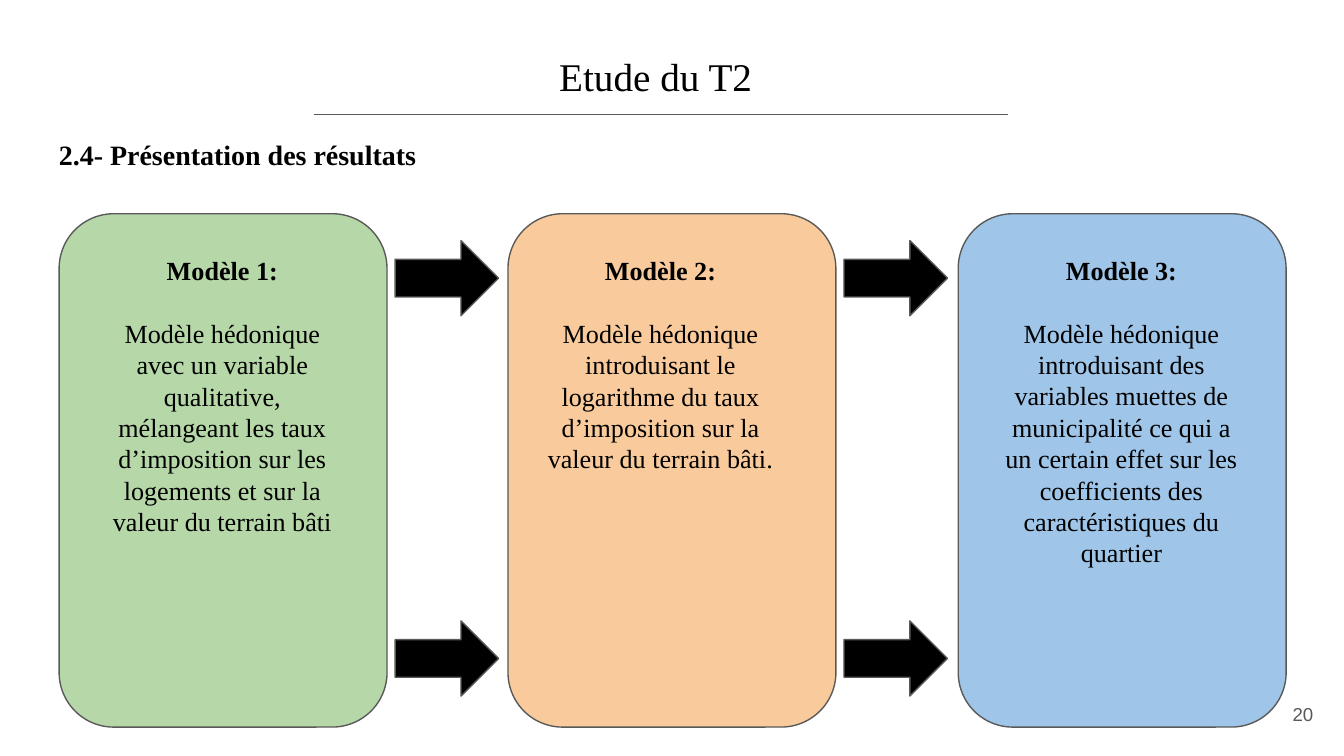
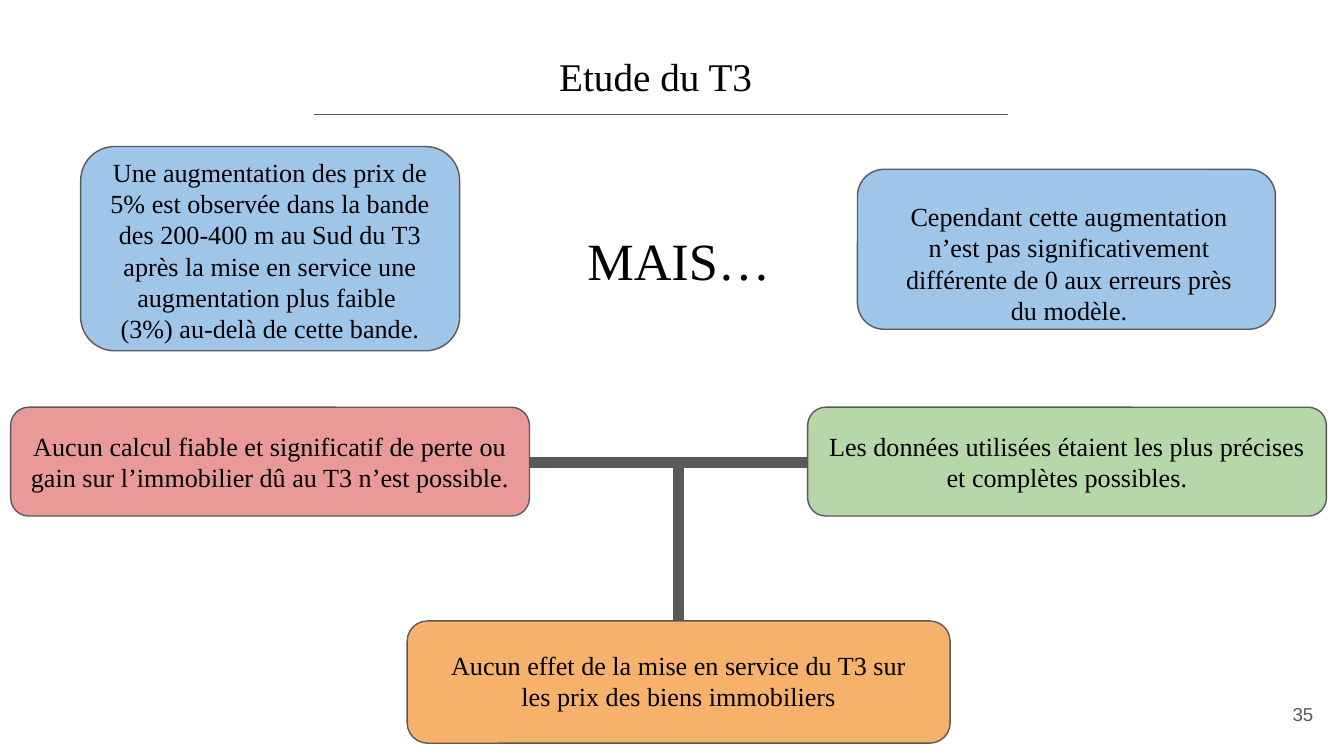
from lxml import etree
from pptx import Presentation
from pptx.dml.color import RGBColor
from pptx.enum.shapes import MSO_CONNECTOR, MSO_SHAPE
from pptx.enum.text import MSO_ANCHOR, MSO_AUTO_SIZE, PP_ALIGN
from pptx.oxml.ns import qn
from pptx.util import Pt

PX = 9144
W = 1000
LEFT, CENTER, RIGHT = PP_ALIGN.LEFT, PP_ALIGN.CENTER, PP_ALIGN.RIGHT
TOP, MIDDLE = MSO_ANCHOR.TOP, MSO_ANCHOR.MIDDLE
GROW, FIXED = MSO_AUTO_SIZE.SHAPE_TO_FIT_TEXT, MSO_AUTO_SIZE.NONE
ROUNDED, ARROW = MSO_SHAPE.ROUNDED_RECTANGLE, MSO_SHAPE.RIGHT_ARROW
STRAIGHT = MSO_CONNECTOR.STRAIGHT
SERIF, SANS = "Times New Roman", "Arial"
COLORS = {
    "text": "000000", "line": "595959", "green": "B6D7A8", "peach": "F9CB9C",
    "blue": "9FC5E8", "red": "EA9999", "orange": "F6B26B",
}
MODELS = [
    ("Modèle 1:", "Modèle hédonique avec un variable qualitative, mélangeant les taux "
     "d’imposition sur les logements et sur la valeur du terrain bâti",
     "green", (23, 232)),
    ("Modèle 2:", "Modèle hédonique introduisant le logarithme du taux d’imposition "
     "sur la valeur du terrain bâti.", "peach", (15, 185)),
    ("Modèle 3:", "Modèle hédonique introduisant des variables muettes de municipalité "
     "ce qui a un certain effet sur les coefficients des caractéristiques du quartier",
     "blue", (23, 256)),
]
FINDINGS = [
    ((638, 126, 311, 119), (23, 13, 269, 114), "blue",
     "Cependant cette augmentation n’est pas significativement différente de 0 aux "
     "erreurs près du modèle."),
    ((60, 109, 282, 152), (11, -3, 260, 162), "blue",
     "Une augmentation des prix de 5% est observée dans la bande des 200-400 m au Sud "
     "du T3 après la mise en service une augmentation plus faible  (3%) au-delà de "
     "cette bande."),
    ((8, 303, 386, 81), (0, 7, 386, 67), "red",
     "Aucun calcul fiable et significatif de perte ou gain sur l’immobilier dû au T3 "
     "n’est possible."),
    ((601, 303, 386, 81), (0, 7, 386, 67), "green",
     "Les données utilisées étaient les plus précises et complètes possibles."),
    ((303, 462, 404, 91), (15, 11, 374, 67), "orange",
     "Aucun effet de la mise en service du T3 sur les prix des biens immobiliers"),
]


def emu(*lengths):
    """Turn px lengths into EMU."""
    return [n * PX for n in lengths]


def rgb(name):
    """Look up a colour by name."""
    return RGBColor.from_string(COLORS[name])


def add_box(slide, kind, box, fill):
    """Add a filled shape with a thin outline."""
    sp = slide.shapes.add_shape(kind, *emu(*box))
    sp.shadow.inherit = False
    sp.fill.solid()
    sp.fill.fore_color.rgb = rgb(fill)
    sp.line.color.rgb = rgb("line")
    sp.line.width = Pt(0.75)


def add_line(slide, start, end, width):
    """Add a straight grey line."""
    line = slide.shapes.add_connector(STRAIGHT, *emu(*start, *end))
    line.line.color.rgb = rgb("line")
    line.line.width = Pt(width)
    etree.SubElement(line._element.spPr, qn("a:effectLst"))


def add_text(slide, box, paragraphs, size, align=CENTER, font=SERIF,
             color="text", anchor=TOP, fit=GROW):
    """Add a text box from (text, bold, space after) paragraphs."""
    tf = slide.shapes.add_textbox(*emu(*box)).text_frame
    tf.word_wrap = True
    tf.auto_size = fit
    tf.vertical_anchor = anchor
    tf.margin_left = tf.margin_right = tf.margin_top = tf.margin_bottom = 10 * PX
    for i, (text, bold, gap) in enumerate(paragraphs):
        p = tf.add_paragraph() if i else tf.paragraphs[0]
        p.alignment = align
        p.space_after = Pt(gap)
        r = p.add_run()
        r.text = text
        r.font.name = font
        r.font.size = Pt(size)
        r.font.bold = bold
        r.font.color.rgb = rgb(color)


def add_frame(prs, title, number):
    """Add a blank slide with its title, rule and number."""
    slide = prs.slides.add_slide(prs.slide_layouts[6])
    add_line(slide, (234, 85), (750, 85), 0.75)
    add_text(slide, (234, 29, 515, 56), [(title, False, 0)], 21)
    add_text(slide, (927, 510, 60, 43), [(number, False, 0)], 10, RIGHT,
             SANS, "line", MIDDLE, FIXED)
    return slide


def add_model(slide, box, heading, body, fill, inset):
    """Add a model card with its heading and description."""
    x, y, w, h = box
    dx, text_h = inset
    add_box(slide, ROUNDED, box, fill)
    add_text(slide, (x + dx, y + 20, 197, text_h),
             [(heading, True, 17), (body, False, 0)], 14)


def add_arrows(slide, box):
    """Add the lower and upper arrows of the gap after a card."""
    x, y, w, h = box
    for dy in (303, 20):
        add_box(slide, ARROW, (x + w + 6, y + dy, 77, 56), "text")


def add_finding(slide, box, inset, fill, text):
    """Add a rounded box with a centred finding."""
    x, y, w, h = box
    dx, dy, text_w, text_h = inset
    add_box(slide, ROUNDED, box, fill)
    add_text(slide, (x + dx, y + dy, text_w, text_h), [(text, False, 0)], 14)


def models_slide(prs):
    """Build the slide of the three models."""
    slide = add_frame(prs, "Etude du T2 ", "20")
    add_text(slide, (34, 92, 400, 45),
             [("2.4- Présentation des résultats", True, 0)], 15, LEFT)
    for i, model in enumerate(MODELS):
        box = (44 + i * 669 // 2, 159, 244, 382)
        add_model(slide, box, *model)
        if i < len(MODELS) - 1:
            add_arrows(slide, box)


def findings_slide(prs):
    """Build the slide of findings and conclusion."""
    slide = add_frame(prs, "Etude du T3 ", "35")
    for finding in FINDINGS:
        add_finding(slide, *finding)
    add_line(slide, (394, 344), (601, 344), 6)
    add_line(slide, (505, 462), (505, 343), 6)
    add_text(slide, (355, 160, 300, 67), [("MAIS…", False, 0)], 28)


def main():
    """Build and save the presentation."""
    prs = Presentation()
    prs.slide_width = W * PX
    prs.slide_height = W * PX * 9 // 16
    models_slide(prs)
    findings_slide(prs)
    prs.save("out.pptx")


if __name__ == "__main__":
    main()
